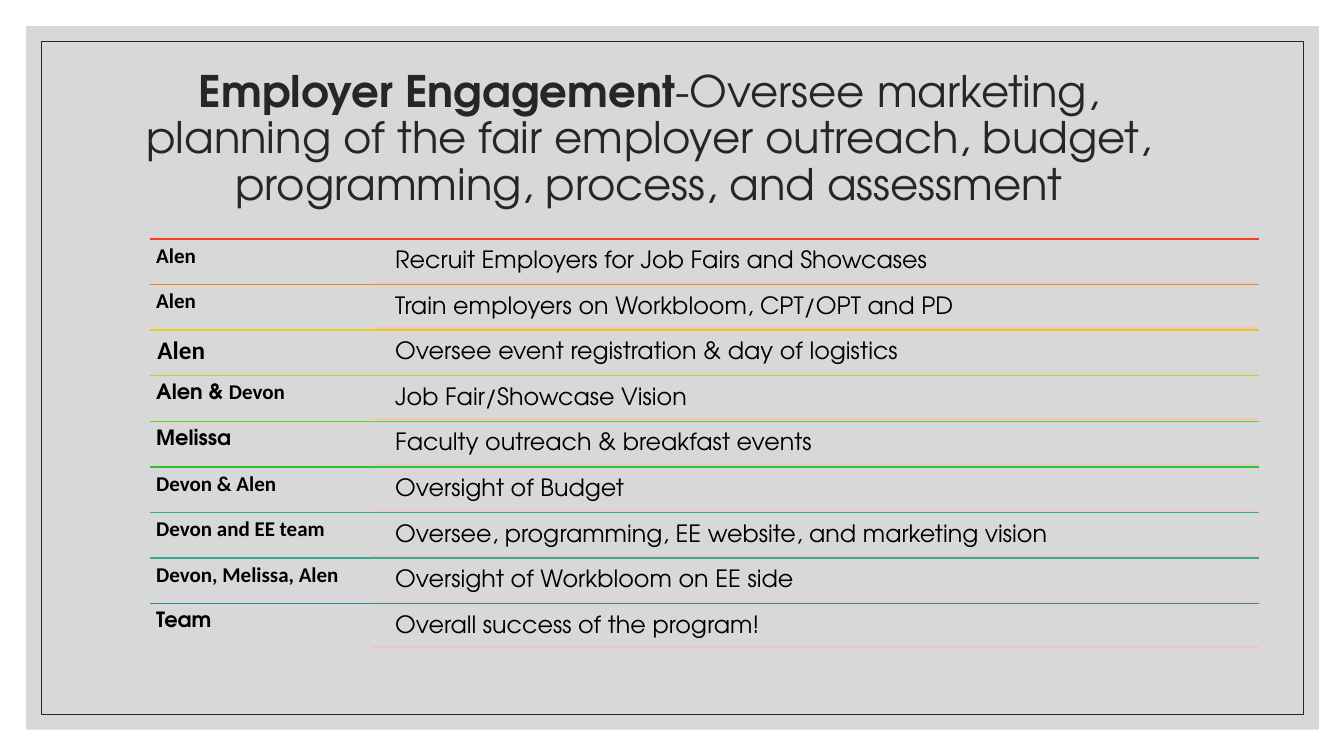
from lxml import etree
from pptx import Presentation
from pptx.dml.color import RGBColor
from pptx.enum import shapes, text
from pptx.oxml import ns
from pptx.util import Inches, Pt

SANS = "Calibri"
GEOMETRIC = "TeX Gyre Adventor"
PANEL_GREY = RGBColor(0xBF, 0xBF, 0xBF)
DARK = RGBColor(0x26, 0x26, 0x26)
BLACK = RGBColor(0, 0, 0)
PINK = RGBColor(0xF8, 0xC0, 0xBE)
TITLE = [
    ("Employer Engagement", GEOMETRIC, True),
    ("-Oversee marketing, planning of the fair employer outreach, budget, "
     "programming, process, and assessment", GEOMETRIC, False),
]
DUTIES = [
    ("F03F2B", 15, [("Alen", SANS, True)], "Recruit Employers for Job Fairs and Showcases"),
    ("EA8728", 15, [("Alen", SANS, True)], "Train employers on Workbloom, CPT/OPT and PD"),
    ("E4CD25", 18, [("Alen", SANS, True)], "Oversee event registration & day of logistics"),
    ("ABDD23", 15, [("Alen & ", GEOMETRIC, True), ("Devon", SANS, True)], "Job Fair/Showcase Vision"),
    ("60D127", 15, [("Melissa", GEOMETRIC, True)], "Faculty outreach & breakfast events"),
    ("2AC432", 15, [("Devon & Alen", SANS, True)], "Oversight of Budget"),
    ("2EB86B", 15, [("Devon and EE team", SANS, True)],
     "Oversee, programming, EE website, and marketing vision"),
    ("31AC97", 15, [("Devon, Melissa, Alen", SANS, True)], "Oversight of Workbloom on EE side"),
    ("3488A0", 15, [("Team", GEOMETRIC, True)], "Overall success of the program!"),
]
LEFT, RIGHT, TOP, PITCH = 1.49, 12.49, 2.37, 0.4525
OWNER_WIDTH, DUTY_LEFT = 2.2, 3.85
DUTY_OFFSET, DUTY_HEIGHT = 0.02, 0.41


def write(frame, spans, size, color):
    frame.word_wrap = True
    frame.auto_size = text.MSO_AUTO_SIZE.NONE
    frame.vertical_anchor = text.MSO_ANCHOR.TOP
    para = frame.paragraphs[0]
    para.line_spacing = 0.9
    for words, font, bold in spans:
        span = para.add_run()
        span.text = words
        span.font.name = font
        span.font.size = Pt(size)
        span.font.bold = bold
        span.font.color.rgb = color
    return para


def add_text(page, left, top, width, height, inset, spans, size):
    box = page.shapes.add_textbox(*map(Inches, (left, top, width, height)))
    frame = box.text_frame
    frame.margin_left = frame.margin_right = Inches(inset)
    frame.margin_top = frame.margin_bottom = Inches(inset)
    write(frame, spans, size, BLACK)


def add_rule(page, left, y, color):
    rule = page.shapes.add_connector(
        shapes.MSO_CONNECTOR.STRAIGHT, *map(Inches, (left, y, RIGHT, y)))
    rule.line.color.rgb = color
    rule.line.width = Pt(1)
    etree.SubElement(rule.element.spPr, ns.qn("a:effectLst"))


def add_rectangle(page, left, top, width, height):
    rectangle = page.shapes.add_shape(
        shapes.MSO_SHAPE.RECTANGLE, *map(Inches, (left, top, width, height)))
    rectangle.shadow.inherit = False
    return rectangle


def add_background(page):
    panel = add_rectangle(page, 0.26, 0.26, 12.82, 6.98)
    panel.fill.solid()
    panel.fill.fore_color.rgb = PANEL_GREY
    panel.line.fill.background()
    color = panel.element.spPr.find(".//" + ns.qn("a:srgbClr"))
    etree.SubElement(color, ns.qn("a:alpha"), val="60000")
    border = add_rectangle(page, 0.41, 0.41, 12.52, 6.68)
    border.fill.background()
    border.line.color.rgb = DARK
    border.line.width = Pt(0.5)


def add_title(page):
    title = page.shapes.title
    title.left, title.top, title.width, title.height = map(Inches, (1.12, 0.64, 10.63, 1.64))
    para = write(title.text_frame, TITLE, 31, DARK)
    para.alignment = text.PP_ALIGN.CENTER
    title.element.getparent().append(title.element)


def add_duties(page):
    for index, (color, size, owner, duty) in enumerate(DUTIES):
        top = TOP + index * PITCH
        duty_top = top + DUTY_OFFSET
        add_rule(page, LEFT, top, RGBColor.from_string(color))
        add_text(page, LEFT, top, OWNER_WIDTH, PITCH, size / 250, owner, size)
        add_text(page, DUTY_LEFT, duty_top, RIGHT - DUTY_LEFT, DUTY_HEIGHT, 0.07,
                 [(duty, GEOMETRIC, False)], 17)
        add_rule(page, LEFT + OWNER_WIDTH, duty_top + DUTY_HEIGHT, PINK)


def main():
    deck = Presentation()
    deck.slide_width = Inches(13.33)
    deck.slide_height = Inches(7.5)
    page = deck.slides.add_slide(deck.slide_layouts[5])
    add_background(page)
    add_title(page)
    add_duties(page)
    deck.save("out.pptx")


if __name__ == "__main__":
    main()
